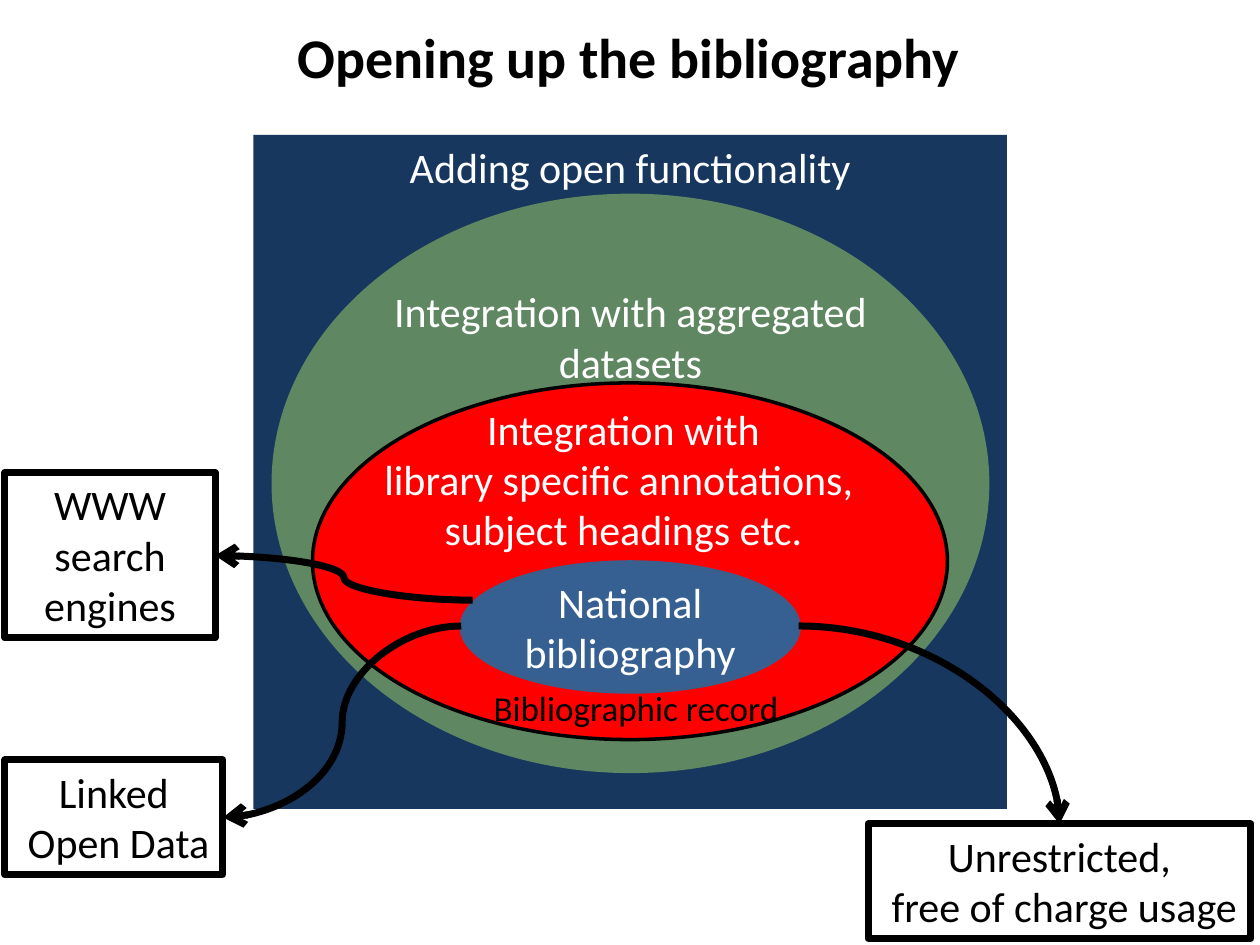
from dataclasses import dataclass

from lxml.etree import SubElement
from pptx import Presentation
from pptx.dml.color import RGBColor
from pptx.enum.shapes import MSO_CONNECTOR as CONN, MSO_SHAPE as SHAPE
from pptx.enum.text import MSO_ANCHOR as ANCHOR, MSO_AUTO_SIZE as FIT, PP_ALIGN as ALIGN
from pptx.oxml.ns import qn
from pptx.util import Cm, Pt


@dataclass(frozen=True)
class Theme:
    font: str = "Calibri"
    title: int = 32
    label: int = 24
    small: int = 20
    thin: int = 2
    thick: int = 4
    black: str = "000000"
    white: str = "FFFFFF"
    navy: str = "17375E"
    green: str = "5F8761"
    red: str = "FF0000"
    blue: str = "376092"
    blue_edge: str = "3A5F8C"


def rgb(color):
    return RGBColor.from_string(color)


def write(tf, text, *, font, size, color, bold=False, align=ALIGN.CENTER,
          anchor=ANCHOR.TOP, wrap=True, grow=False):
    """Fill a text frame, one paragraph for each line of text."""
    tf.word_wrap = wrap
    tf.vertical_anchor = anchor
    tf.auto_size = FIT.SHAPE_TO_FIT_TEXT if grow else FIT.NONE
    for i, line in enumerate(text.split("\n")):
        p = tf.add_paragraph() if i else tf.paragraphs[0]
        p.alignment = align
        r = p.add_run()
        r.text = line
        r.font.name, r.font.size, r.font.bold = font, Pt(size), bold
        r.font.color.rgb = rgb(color)


class Board:
    """Holds the theme and the current slide."""

    def __init__(self, slide, theme):
        self.slide, self.theme = slide, theme

    def title(self, text, box):
        sp = self.slide.shapes.title
        sp.left, sp.top, sp.width, sp.height = map(Cm, box)
        write(sp.text_frame, text, font=self.theme.font, size=self.theme.title,
              color=self.theme.black, bold=True, wrap=False)

    def shape(self, kind, box, text="", *, fill=None, line=None, width=2, color=None, **fmt):
        sp = self.slide.shapes.add_shape(kind, *map(Cm, box))
        sp.shadow.inherit = False
        if fill:
            sp.fill.solid()
            sp.fill.fore_color.rgb = rgb(fill)
        else:
            sp.fill.background()
        if line:
            sp.line.color.rgb = rgb(line)
            sp.line.width = Pt(width)
        else:
            sp.line.fill.background()
        if text:
            write(sp.text_frame, text, font=self.theme.font, size=self.theme.label,
                  color=color or self.theme.white, **fmt)

    def outlet(self, box, text, **fmt):
        self.shape(SHAPE.RECTANGLE, box, text, line=self.theme.black,
                   width=self.theme.thick, color=self.theme.black, grow=True, **fmt)

    def label(self, box, text, *, size, color, align=ALIGN.CENTER):
        sp = self.slide.shapes.add_textbox(*map(Cm, box))
        write(sp.text_frame, text, font=self.theme.font, size=size, color=color,
              align=align, wrap=False, grow=True)

    def arrow(self, start, end, preset="curvedConnector3"):
        cx = self.slide.shapes.add_connector(CONN.CURVE, *map(Cm, start + end))
        cx.line.color.rgb = rgb(self.theme.black)
        cx.line.width = Pt(self.theme.thick)
        sp_pr = cx._element.spPr
        sp_pr.find(qn("a:prstGeom")).set("prst", preset)
        SubElement(sp_pr.find(qn("a:ln")), qn("a:tailEnd"), type="arrow")
        SubElement(sp_pr, qn("a:effectLst"))


def main():
    prs = Presentation()
    prs.slide_width, prs.slide_height = Cm(25.4), Cm(19.05)
    theme = Theme()
    board = Board(prs.slides.add_slide(prs.slide_layouts[5]), theme)

    board.title("Opening up the bibliography", (5.69, 0.33, 13.97, 1.63))

    # Nested layers around the bibliography
    board.shape(SHAPE.RECTANGLE, (5.11, 2.72, 15.19, 13.59),
                "Adding open functionality", fill=theme.navy)
    board.shape(SHAPE.OVAL, (5.51, 3.94, 14.4, 11.61), "Integration with aggregated datasets",
                fill=theme.green, line=theme.green, width=theme.thin)
    board.shape(SHAPE.OVAL, (6.3, 7.72, 12.8, 7.19),
                fill=theme.red, line=theme.black, width=theme.thin)
    board.shape(SHAPE.OVAL, (9.3, 11.33, 6.81, 2.62), "National bibliography",
                fill=theme.blue, line=theme.blue_edge, width=theme.thin, anchor=ANCHOR.MIDDLE)

    # Labels on the red layer
    board.label((9.7, 13.72, 6.3, 1.12), "Bibliographic record",
                size=theme.small, color=theme.black, align=ALIGN.LEFT)
    board.label((7.44, 8, 10.26, 4.11),
                "Integration with\nlibrary specific annotations, \nsubject headings etc.",
                size=theme.label, color=theme.white)

    # Outlets and the arrows that lead to them
    board.outlet((17.5, 16.61, 7.72, 2.31), "Unrestricted,\n free of charge usage")
    board.outlet((0.1, 15.32, 4.39, 2.31), "Linked\n Open Data", wrap=False)
    board.outlet((0.1, 9.53, 4.24, 3.33), "WWW\nsearch engines")
    board.arrow((16.1, 12.62), (21.36, 16.61), "curvedConnector2")
    board.arrow((9.3, 12.62), (4.5, 16.48))
    board.arrow((9.53, 12.1), (4.34, 11.2))

    prs.save("out.pptx")


if __name__ == "__main__":
    main()
